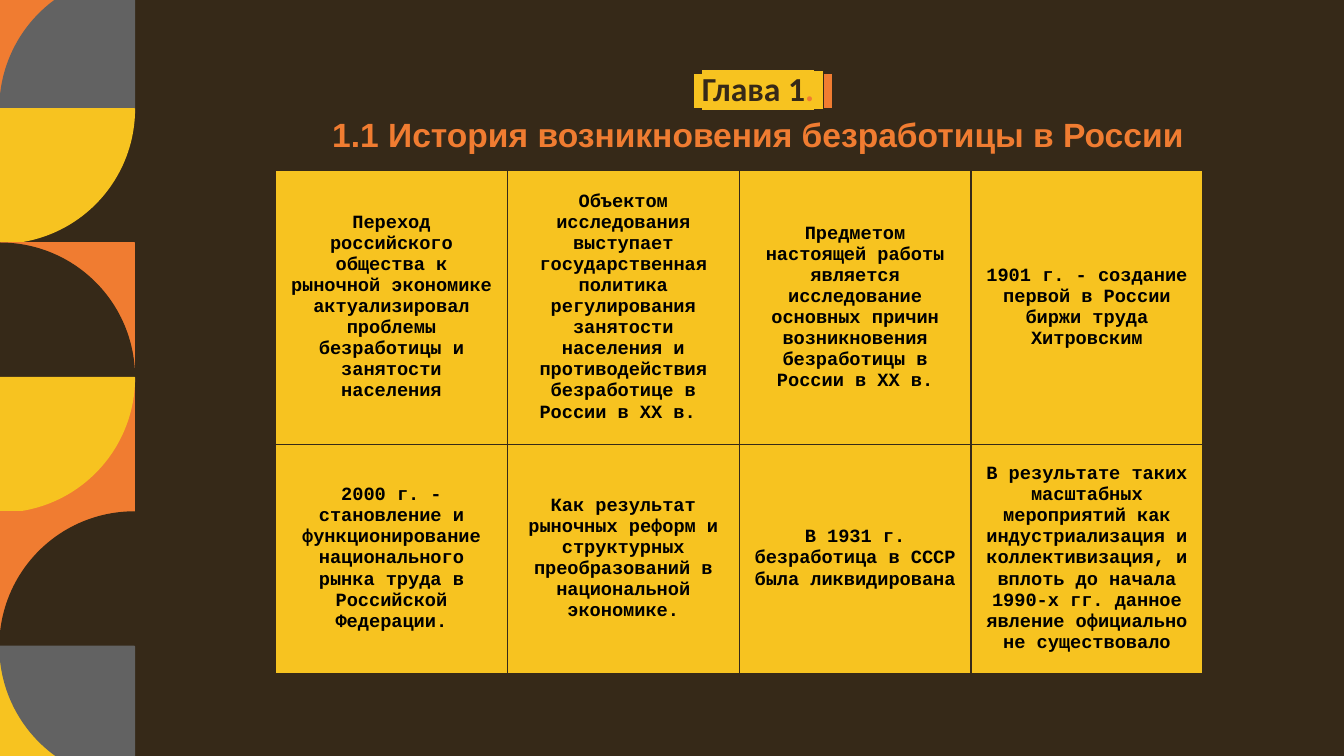
from dataclasses import dataclass

from lxml.etree import SubElement
from pptx import Presentation
from pptx.dml.color import RGBColor
from pptx.enum.shapes import MSO_SHAPE as Preset
from pptx.enum.text import MSO_ANCHOR as Anchor, MSO_AUTO_SIZE as AutoSize, PP_ALIGN as Align
from pptx.oxml.ns import qn
from pptx.util import Inches, Pt


@dataclass(frozen=True)
class Theme:
    dark: str = "362918"
    yellow: str = "F7C320"
    orange: str = "F07C31"
    grey: str = "626262"
    black: str = "000000"
    title_font: str = "Arial"
    chapter_font: str = "Calibri"
    cell_font: str = "Courier New"
    title_size: int = 18
    pad_size: int = 16
    cell_size: int = 10
    line_width: float = 0.75


THEME = Theme()

# Square colour, quarter-disc colour, rotation (0 puts the disc centre bottom right)
TILES = [
    (THEME.orange, THEME.grey, 0),
    (THEME.dark, THEME.yellow, 180),
    (THEME.orange, THEME.dark, 90),
    (THEME.orange, THEME.yellow, 180),
    (THEME.orange, THEME.dark, 0),
    (THEME.yellow, THEME.grey, 270),
]

FACTS = [
    [
        "Переход российского общества к рыночной экономике актуализировал "
        "проблемы безработицы и занятости населения",
        "Объектом исследования выступает государственная политика регулирования "
        "занятости населения и противодействия безработице в России в XX в. ",
        "Предметом настоящей работы является исследование основных причин "
        "возникновения безработицы в России в XX в.",
        "1901 г. - создание первой в России биржи труда Хитровским",
    ],
    [
        "2000 г. - становление и функционирование национального рынка труда "
        "в Российской Федерации.",
        "Как результат рыночных реформ и структурных преобразований "
        "в национальной экономике.",
        "В 1931 г. безработица в СССР была ликвидирована",
        "В результате таких масштабных мероприятий как индустриализация и "
        "коллективизация, и вплоть до начала 1990-х гг. данное явление "
        "официально не существовало",
    ],
]


def color(value):
    return RGBColor.from_string(value)


def add_run(paragraph, text, font, size, fill, bold=True, highlight=None):
    run = paragraph.add_run()
    run.text = text
    run.font.name, run.font.size, run.font.bold = font, Pt(size), bold
    run.font.color.rgb = color(fill)
    if highlight:
        properties = run.font.fill._xPr
        mark = SubElement(properties, qn("a:highlight"))
        SubElement(mark, qn("a:srgbClr"), val=highlight)
        properties.find(qn("a:solidFill")).addnext(mark)


def set_margins(target):
    target.margin_left = target.margin_right = Inches(0.1)
    target.margin_top = target.margin_bottom = Inches(0.1)


def add_tile_column(slide, left, top, size):
    """Stack square tiles, each holding a quarter disc."""
    for index, (square, disc, rotation) in enumerate(TILES):
        for preset, fill, angle in ((Preset.RECTANGLE, square, 0),
                                    (Preset.PIE_WEDGE, disc, rotation)):
            shape = slide.shapes.add_shape(
                preset, Inches(left), Inches(top + index * size), Inches(size), Inches(size))
            shape.rotation = angle
            shape.shadow.inherit = False
            shape.fill.solid()
            shape.fill.fore_color.rgb = color(fill)
            shape.line.color.rgb = color(fill)
            shape.line.width = Pt(THEME.line_width)


def fill_title(slide, left, top, width, height):
    """Chapter label on a highlight, with the section heading below."""
    title = slide.shapes.title
    title.left, title.top = Inches(left), Inches(top)
    title.width, title.height = Inches(width), Inches(height)
    frame = title.text_frame
    frame.word_wrap, frame.auto_size = True, AutoSize.NONE
    frame.vertical_anchor = Anchor.TOP
    set_margins(frame)

    t = THEME
    lines = [
        [(" ", t.title_font, t.pad_size, t.dark, True, t.yellow),
         ("Глава 1", t.chapter_font, t.title_size, t.dark, True, t.yellow),
         (".", t.chapter_font, t.title_size, t.orange, True, t.yellow),
         (" ", t.title_font, t.title_size, t.orange, True, t.yellow),
         (" ", t.title_font, t.pad_size, t.orange, False, t.orange)],
        [("1.1 История возникновения безработицы в России ",
          t.title_font, t.title_size, t.orange)],
    ]
    for index, runs in enumerate(lines):
        paragraph = frame.add_paragraph() if index else frame.paragraphs[0]
        paragraph.alignment = Align.CENTER
        paragraph.line_spacing = 1.15
        paragraph.space_before = Pt(0)
        for run in runs:
            add_run(paragraph, *run)


def add_borders(cell):
    properties = cell._tc.get_or_add_tcPr()
    for index, side in enumerate(("lnL", "lnR", "lnT", "lnB")):
        border = SubElement(properties, qn(f"a:{side}"), w=str(Pt(THEME.line_width)))
        fill = SubElement(border, qn("a:solidFill"))
        SubElement(fill, qn("a:srgbClr"), val=THEME.dark)
        properties.insert(index, border)


def add_fact_table(slide, left, top, width, row_heights):
    """Grid of equal columns with one fact in each cell."""
    columns = len(FACTS[0])
    table = slide.shapes.add_table(
        len(FACTS), columns, Inches(left), Inches(top),
        Inches(width), Inches(sum(row_heights))).table
    table.first_row = table.horz_banding = False
    for column in table.columns:
        column.width = Inches(width / columns)
    for row, height, facts in zip(table.rows, row_heights, FACTS):
        row.height = Inches(height)
        for cell, fact in zip(row.cells, facts):
            cell.fill.solid()
            cell.fill.fore_color.rgb = color(THEME.yellow)
            cell.vertical_anchor = Anchor.MIDDLE
            set_margins(cell)
            add_borders(cell)
            paragraph = cell.text_frame.paragraphs[0]
            paragraph.alignment = Align.CENTER
            add_run(paragraph, fact, THEME.cell_font, THEME.cell_size, THEME.black)


def main():
    presentation = Presentation()
    # Widescreen, 16:9
    presentation.slide_width = Inches(10)
    presentation.slide_height = Inches(10 * 9 / 16)
    title_only = presentation.slide_layouts[5]
    slide = presentation.slides.add_slide(title_only)
    slide.background.fill.solid()
    slide.background.fill.fore_color.rgb = color(THEME.dark)

    add_tile_column(slide, left=0, top=-0.19, size=1)
    fill_title(slide, left=1.85, top=0.36, width=7.65, height=1.2)
    add_fact_table(slide, left=2.05, top=1.27, width=6.9, row_heights=(2.04, 1.7))
    presentation.save("out.pptx")


if __name__ == "__main__":
    main()
